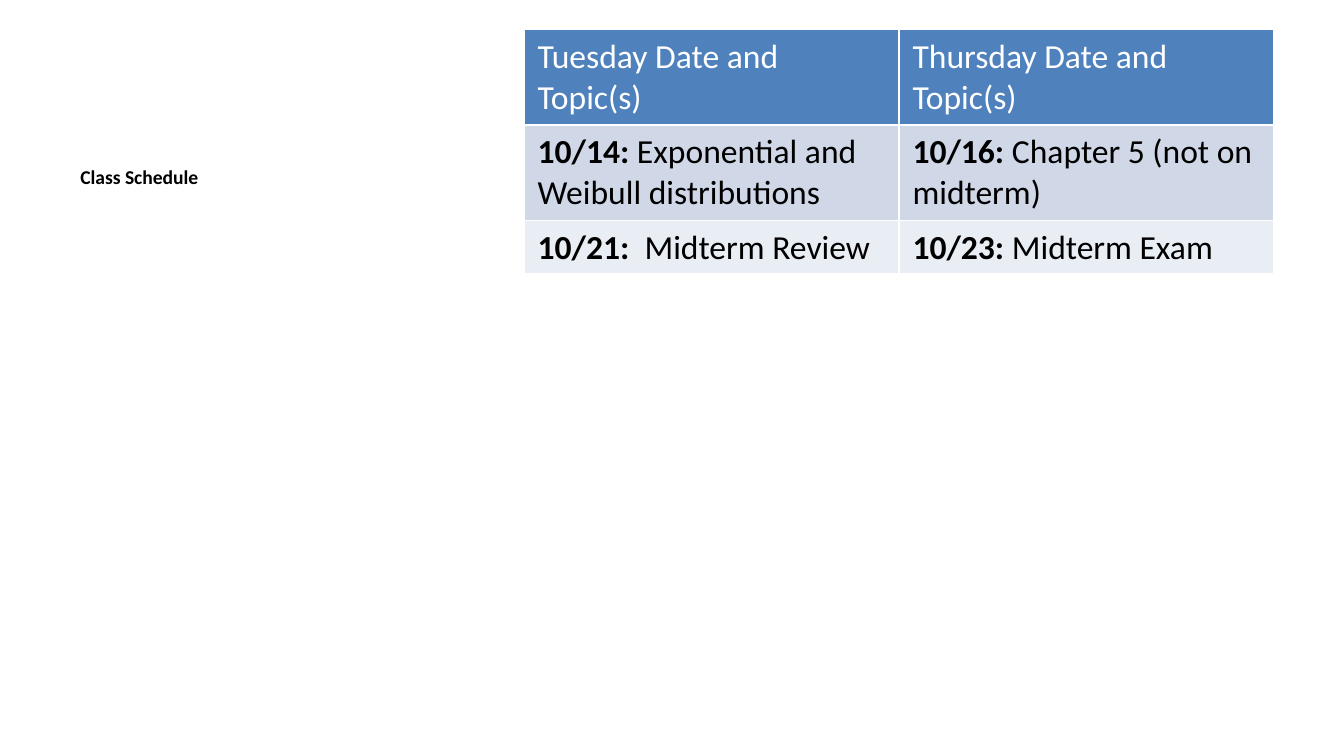
from dataclasses import dataclass

from lxml.etree import SubElement as Sub
from pptx import Presentation
from pptx.dml.color import RGBColor as Rgb
from pptx.oxml.ns import qn
from pptx.util import Inches as In, Pt


@dataclass(frozen=True)
class Theme:
    font: str = "Calibri"
    small: float = 10.5
    large: float = 18
    rule: float = 1
    dark: str = "000000"
    light: str = "FFFFFF"
    head: str = "4F81BD"
    bands: tuple = ("D0D8E8", "E9EDF4")


THEME = Theme()
WIDE = 10
HIGH = WIDE * 9 / 16
TITLE_BOX = (0.5, 1.18, 3.29, 3.85)
TABLE_BOX = (3.9, 0.22, 5.58, 1.82)
ROWS = (0.71, 0.71, 0.4)
HEADS = ("Tuesday Date and Topic(s)", "Thursday Date and Topic(s)")
WEEKS = (
    (("10/14:", " Exponential and Weibull distributions"),
     ("10/16:", " Chapter 5 (not on midterm)")),
    (("10/21: ", " Midterm Review"), ("10/23:", " Midterm Exam")),
)


def add_run(para, text, size, color, bold=False):
    run = para.add_run()
    run.text = text
    style = {"name": THEME.font, "size": Pt(size), "bold": bold}
    for key, value in style.items():
        setattr(run.font, key, value)
    run.font.color.rgb = Rgb.from_string(color)


def add_title(slide, box):
    frame = slide.shapes.add_textbox(*map(In, box)).text_frame
    frame.word_wrap = True
    add_run(frame.paragraphs[0], "Class Schedule", THEME.small, THEME.dark, True)


def paint(cell, color):
    """Draw the cell's four borders, then fill it."""
    props = cell._tc.get_or_add_tcPr()
    for side in "LRTB":
        line = Sub(props, qn(f"a:ln{side}"), w=str(Pt(THEME.rule)))
        Sub(Sub(line, qn("a:solidFill")), qn("a:srgbClr"), val=THEME.light)
    cell.fill.solid()
    cell.fill.fore_color.rgb = Rgb.from_string(color)


def add_plan(slide, box):
    table = slide.shapes.add_table(len(ROWS), len(HEADS), *map(In, box)).table
    for col in table.columns:
        col.width = In(box[2] / len(HEADS))
    for row, high in zip(table.rows, ROWS):
        row.height = In(high)
    for c, text in enumerate(HEADS):
        cell = table.cell(0, c)
        paint(cell, THEME.head)
        add_run(cell.text_frame.paragraphs[0], text, THEME.large, THEME.light)
    for r, (week, band) in enumerate(zip(WEEKS, THEME.bands), 1):
        for c, (date, topic) in enumerate(week):
            cell = table.cell(r, c)
            paint(cell, band)
            para = cell.text_frame.paragraphs[0]
            add_run(para, date, THEME.large, THEME.dark, True)
            add_run(para, topic, THEME.large, THEME.dark)


def main():
    deck = Presentation()
    deck.slide_width, deck.slide_height = In(WIDE), In(HIGH)
    slide = deck.slides.add_slide(deck.slide_layouts[6])
    add_title(slide, TITLE_BOX)
    add_plan(slide, TABLE_BOX)
    deck.save("out.pptx")


if __name__ == "__main__":
    main()
